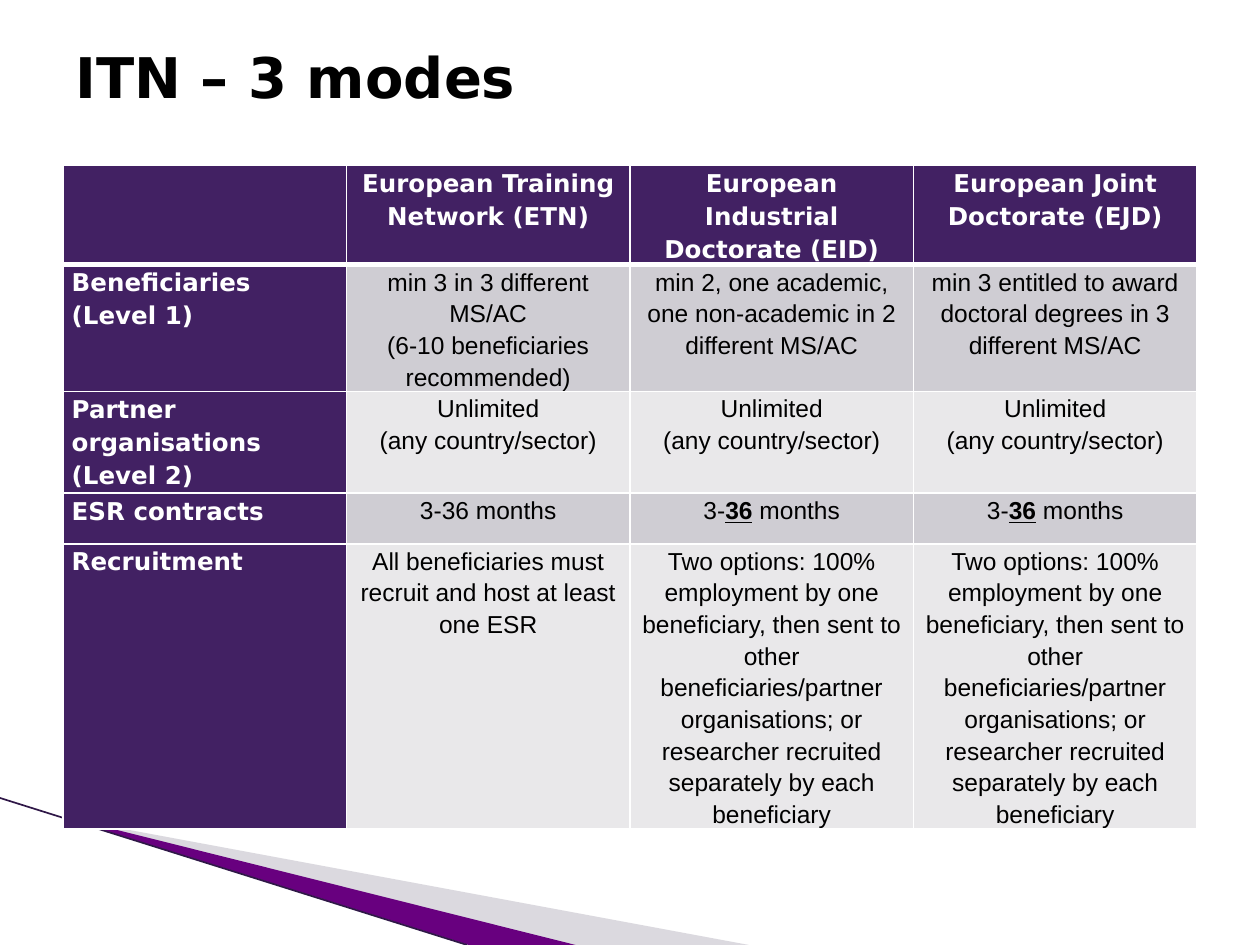
from dataclasses import dataclass

from lxml import etree
from pptx import Presentation
from pptx.dml.color import RGBColor
from pptx.enum.shapes import MSO_CONNECTOR
from pptx.enum.text import MSO_ANCHOR, PP_ALIGN
from pptx.oxml.ns import qn
from pptx.util import Pt

LEFT, CENTER = PP_ALIGN.LEFT, PP_ALIGN.CENTER
MIDDLE, TOP = MSO_ANCHOR.MIDDLE, MSO_ANCHOR.TOP
STRAIGHT = MSO_CONNECTOR.STRAIGHT


@dataclass(frozen=True)
class Theme:
    head: str = "DejaVu Sans"
    body: str = "Arial"
    title_size: float = 32
    cell_size: float = 14
    black: str = "000000"
    white: str = "FFFFFF"
    purple: str = "422163"
    dark: str = "CFCDD3"
    light: str = "E9E8EA"
    violet: str = "68007F"
    grey: str = "A7A2B1"
    line: str = "2F1747"


@dataclass(frozen=True)
class Wedge:
    points: tuple
    color: str
    alpha: int = 100


@dataclass(frozen=True)
class Row:
    height: float
    cells: tuple


THEME = Theme()

WEDGES = (
    Wedge(((39.6, 468.5), (428.5, 540), (328.5, 540), (39.6, 468)), THEME.grey, 40),
    Wedge(((38.2, 467.3), (329, 540), (268, 540), (38.9, 468)), THEME.violet),
)

UNLIMITED = "Unlimited\n(any country/sector)"
MONTHS = "3-*36* months"
OPTIONS = (
    "Two options: 100% employment by one beneficiary, then sent to other "
    "beneficiaries/partner organisations; or researcher recruited "
    "separately by each beneficiary"
)

# Asterisks enclose stressed words
ROWS = (
    Row(56, ("", "European Training Network (ETN)",
             "European Industrial Doctorate (EID)",
             "European Joint Doctorate (EJD)")),
    Row(72.5, ("Beneficiaries\n(Level 1)",
               "min 3 in 3 different MS/AC\n(6-10 beneficiaries recommended)",
               "min 2, one academic, one non-academic in 2 different MS/AC",
               "min 3 entitled to award doctoral degrees in 3 different MS/AC")),
    Row(58, ("Partner organisations\n(Level 2)",) + (UNLIMITED,) * 3),
    Row(29, ("ESR contracts", "3-36 months", MONTHS, MONTHS)),
    Row(163, ("Recruitment",
              "All beneficiaries must recruit and host at least one ESR",
              OPTIONS, OPTIONS)),
)


def rgb(code: str) -> RGBColor:
    return RGBColor.from_string(code)


def write(frame, text: str, *, font: str, size: float, color: str,
          bold: bool = False, align=LEFT, space: float = 1) -> None:
    for i, line in enumerate(text.split("\n")):
        para = frame.paragraphs[0] if i == 0 else frame.add_paragraph()
        para.alignment = align
        para.line_spacing = space
        for j, part in enumerate(line.split("*")):
            run = para.add_run()
            run.text = part
            stress = j % 2 == 1
            run.font.name = font
            run.font.size = Pt(size)
            run.font.bold = bold or stress
            run.font.underline = stress
            run.font.color.rgb = rgb(color)


def add_wedge(slide, wedge: Wedge) -> None:
    start, *rest = wedge.points
    path = slide.shapes.build_freeform(*start, scale=Pt(1))
    path.add_line_segments(rest, close=True)
    shape = path.convert_to_shape()
    shape.shadow.inherit = False
    shape.fill.solid()
    shape.fill.fore_color.rgb = rgb(wedge.color)
    shape.line.fill.background()
    if wedge.alpha < 100:
        tone = shape.fill._xPr.find(".//" + qn("a:srgbClr"))
        etree.SubElement(tone, qn("a:alpha"), val=str(wedge.alpha * 1000))


def add_line(slide, start: tuple, end: tuple, color: str, width: float) -> None:
    line = slide.shapes.add_connector(STRAIGHT, *map(Pt, start + end))
    line.line.color.rgb = rgb(color)
    line.line.width = Pt(width)
    etree.SubElement(line._element.spPr, qn("a:effectLst"))


def add_edges(cell, color: str, widths: dict) -> None:
    props = cell._tc.get_or_add_tcPr()
    for side, width in widths.items():
        edge = etree.SubElement(props, qn(f"a:ln{side}"), w=str(Pt(width)))
        fill = etree.SubElement(edge, qn("a:solidFill"))
        etree.SubElement(fill, qn("a:srgbClr"), val=color)


def fill_cell(cell, text: str, row: int, col: int) -> None:
    head = row == 0 or col == 0
    add_edges(cell, THEME.white, {
        "L": 1, "R": 1, "T": 3 if row == 1 else 1, "B": 3 if row == 0 else 1})
    band = THEME.dark if row % 2 else THEME.light
    cell.fill.solid()
    cell.fill.fore_color.rgb = rgb(THEME.purple if head else band)
    cell.margin_left = cell.margin_right = Pt(5)
    cell.margin_top = cell.margin_bottom = Pt(0)
    cell.vertical_anchor = TOP
    if text:
        write(cell.text_frame, text, size=THEME.cell_size, bold=head,
              font=THEME.head if head else THEME.body,
              color=THEME.white if head else THEME.black,
              align=LEFT if col == 0 else CENTER, space=1.15)


def add_grid(slide, left: float, top: float, width: float, rows: tuple) -> None:
    count = len(rows[0].cells)
    height = sum(row.height for row in rows)
    table = slide.shapes.add_table(
        len(rows), count, Pt(left), Pt(top), Pt(width), Pt(height)).table
    table.horz_banding = False
    for col in table.columns:
        col.width = Pt(width / count)
    for i, row in enumerate(rows):
        table.rows[i].height = Pt(row.height)
        for j, text in enumerate(row.cells):
            fill_cell(table.cell(i, j), text, i, j)


def main() -> None:
    deck = Presentation()
    deck.slide_width, deck.slide_height = Pt(720), Pt(540)
    slide = deck.slides.add_slide(deck.slide_layouts[5])

    # Corner decoration
    for wedge in WEDGES:
        add_wedge(slide, wedge)
    add_line(slide, (0, 456), (267, 540), THEME.line, 0.95)

    # Comparison of modes
    add_grid(slide, 36, 94.5, 648, ROWS)

    # Title
    title = slide.shapes.title
    title.left, title.top = Pt(36), Pt(-1.4)
    title.width, title.height = Pt(568), Pt(90)
    title.text_frame.vertical_anchor = MIDDLE
    title.text_frame.word_wrap = True
    write(title.text_frame, "ITN – 3 modes", font=THEME.head,
          size=THEME.title_size, color=THEME.black, bold=True)

    deck.save("out.pptx")


if __name__ == "__main__":
    main()
